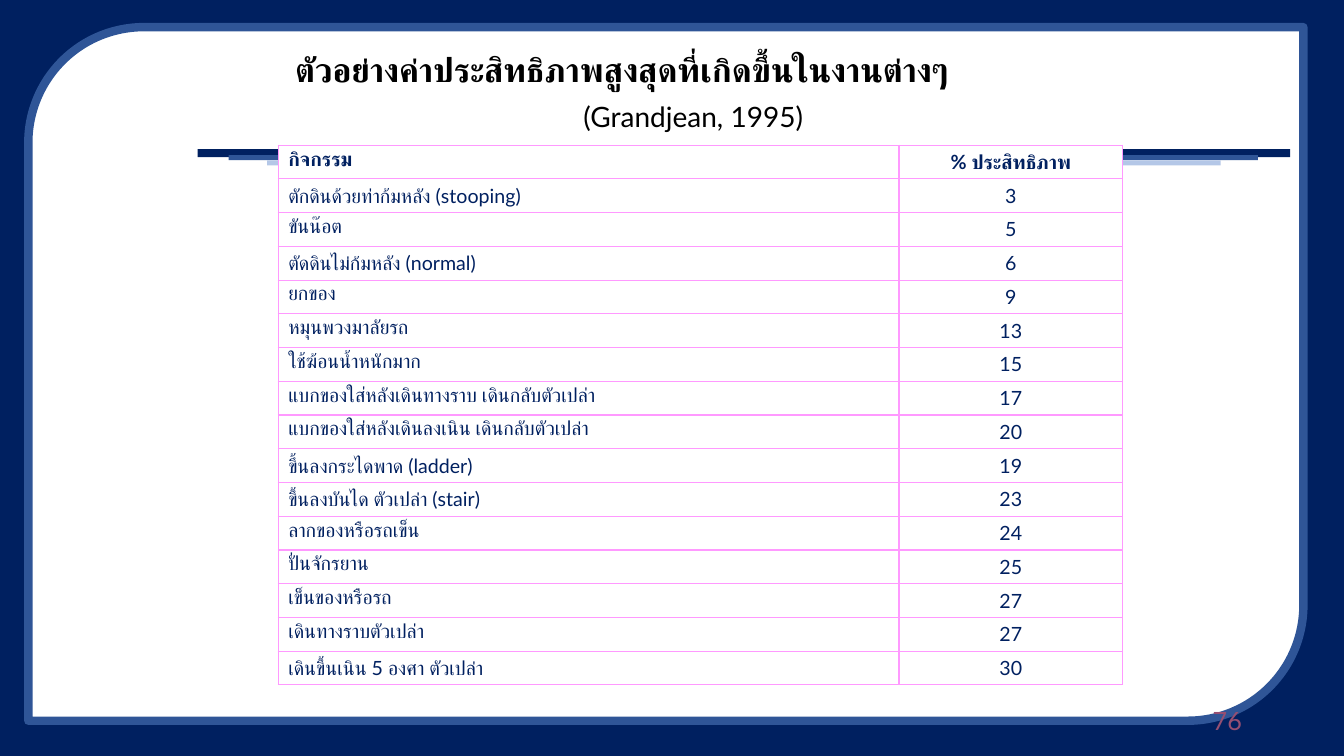
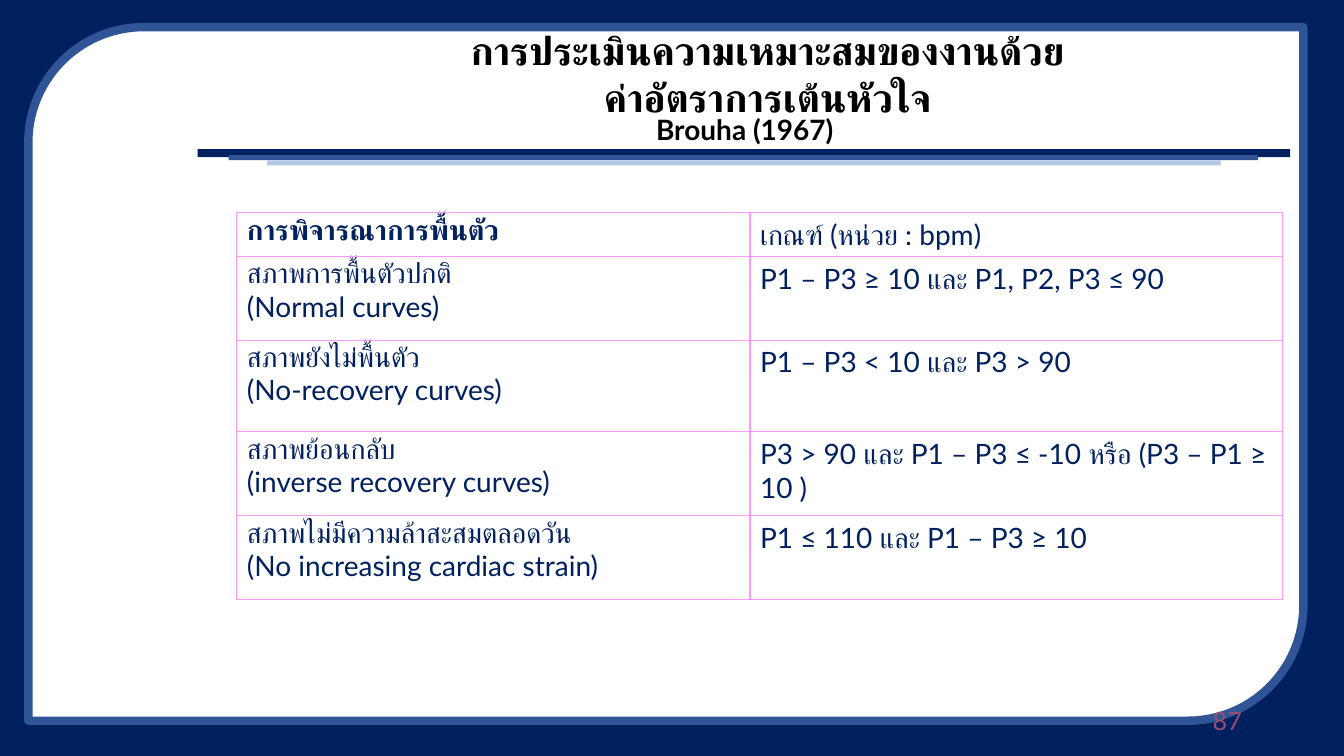
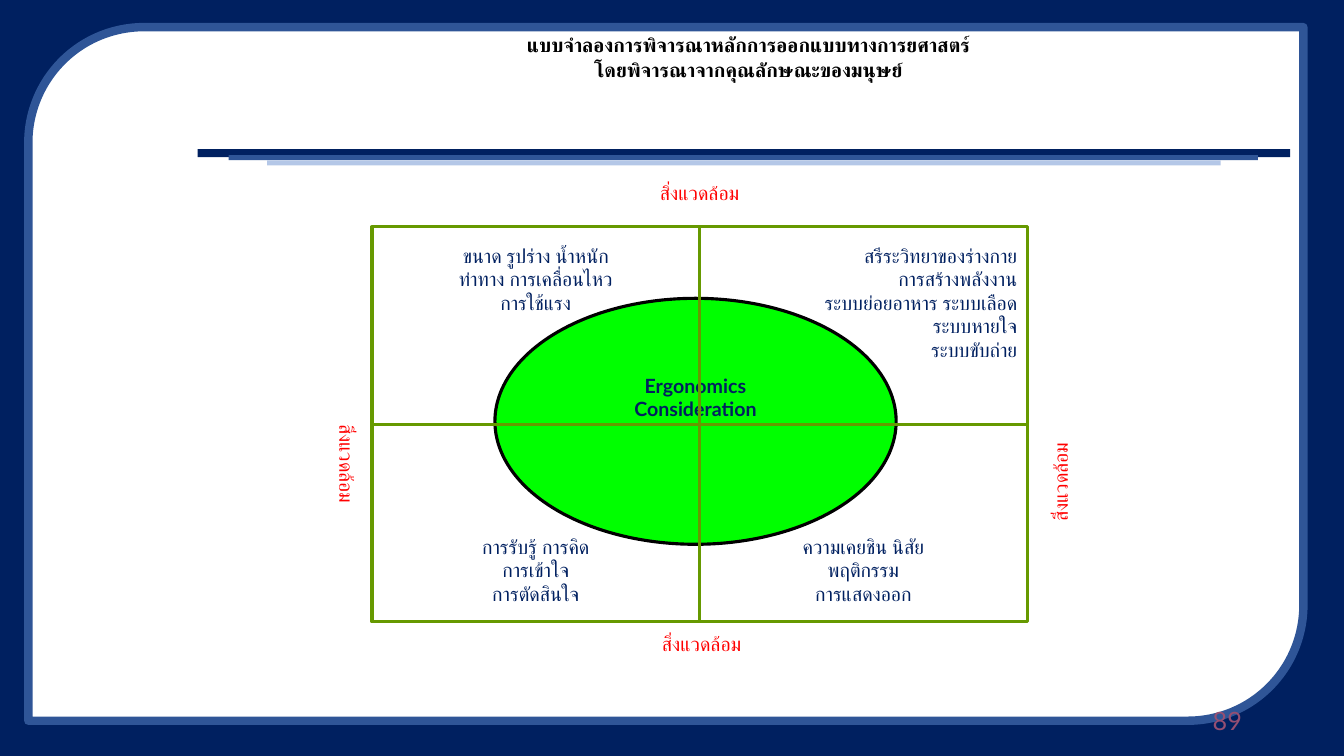
"""Build three ergonomics slides: work efficiency, heart-rate recovery, design model."""
from itertools import product
from lxml.etree import SubElement
from pptx import Presentation
from pptx.dml.color import RGBColor
from pptx.enum.shapes import MSO_SHAPE as SHAPE
from pptx.enum.text import MSO_ANCHOR as ANCHOR, PP_ALIGN as ALIGN
from pptx.oxml.ns import qn
from pptx.util import Pt

FONT = "Lato"
COLORS = {
    "navy": "002060", "blue": "2F5597", "pale": "B4C7E7", "white": "FFFFFF",
    "black": "000000", "number": "954F72", "pink": "FF99FF", "red": "FF0000",
    "lime": "00FF00", "olive": "669900",
}
FRAME = (20.2, 19.4, 910.8, 495.4)
BANDS = [
    ((141.1, 106.5, 780.5, 5.8), "navy"),
    ((163.4, 110.9, 735.1, 3.6), "blue"),
    ((190.8, 114.5, 681.1, 3.6), "pale"),
]
NUMBER_BOX = (678.2, 500.4, 216, 28.8)

EFFICIENCY = [
    ("กิจกรรม", "% ประสิทธิภาพ"),
    ("ตักดินด้วยท่าก้มหลัง (stooping)", "3"),
    ("ขันน๊อต", "5"),
    ("ตัดดินไม่ก้มหลัง (normal)", "6"),
    ("ยกของ", "9"),
    ("หมุนพวงมาลัยรถ", "13"),
    ("ใช้ฆ้อนน้ำหนักมาก", "15"),
    ("แบกของใส่หลังเดินทางราบ เดินกลับตัวเปล่า", "17"),
    ("แบกของใส่หลังเดินลงเนิน เดินกลับตัวเปล่า", "20"),
    ("ขึ้นลงกระไดพาด (ladder)", "19"),
    ("ขึ้นลงบันได ตัวเปล่า (stair)", "23"),
    ("ลากของหรือรถเข็น", "24"),
    ("ปั่นจักรยาน", "25"),
    ("เข็นของหรือรถ", "27"),
    ("เดินทางราบตัวเปล่า", "27"),
    ("เดินขึ้นเนิน 5 องศา ตัวเปล่า", "30"),
]
RECOVERY = [
    ("การพิจารณาการพื้นตัว", "เกณฑ์ (หน่วย : bpm)"),
    ("สภาพการพื้นตัวปกติ\n(Normal curves)", "P1 – P3 ≥ 10 และ P1, P2, P3 ≤ 90"),
    ("สภาพยังไม่พื้นตัว\n(No-recovery curves)", "P1 – P3 < 10 และ P3 > 90"),
    ("สภาพย้อนกลับ\n(inverse recovery curves)",
     "P3 > 90 และ P1 – P3 ≤ -10 หรือ (P3 – P1 ≥ 10 )"),
    ("สภาพไม่มีความล้าสะสมตลอดวัน\n(No increasing cardiac strain)",
     "P1 ≤ 110 และ P1 – P3 ≥ 10"),
]
ENVIRONMENT = "สิ่งแวดล้อม"
ENVIRONMENT_BOXES = [
    ((427, 447.8, 148.3, 23), 0),
    ((175.7, 317.5, 141.1, 27.4), 90),
    ((704.9, 327.6, 114.5, 33.8), 270),
    ((412.6, 126, 174.2, 24.5), 0),
]
QUADRANTS = [
    ("ขนาด รูปร่าง น้ำหนัก\nท่าทาง การเคลื่อนไหว\nการใช้แรง", ALIGN.CENTER),
    ("สรีระวิทยาของร่างกาย\nการสร้างพลังงาน\nระบบย่อยอาหาร ระบบเลือด\nระบบหายใจ\nระบบขับถ่าย",
     ALIGN.RIGHT),
    ("การรับรู้ การคิด\nการเข้าใจ\nการตัดสินใจ", ALIGN.CENTER),
    ("ความเคยชิน นิสัย\nพฤติกรรม\nการแสดงออก", ALIGN.CENTER),
]
GRID_LEFT, GRID_TOP, QUAD_W, QUAD_H = 265.7, 162, 234, 141.1


def rgb(name):
    return RGBColor.from_string(COLORS[name])


def put_text(tf, text, size=14, color="navy", bold=False, align=ALIGN.LEFT, spacing=None):
    for i, line in enumerate(text.split("\n")):
        p = tf.paragraphs[0] if i == 0 else tf.add_paragraph()
        p.alignment = align
        if spacing:
            p.line_spacing = spacing
        r = p.add_run()
        r.text = line
        f = r.font
        f.name, f.size, f.bold = FONT, Pt(size), bold
        f.color.rgb = rgb(color)


def add_text(s, box, text, anchor=ANCHOR.TOP, rotation=0, **style):
    sp = s.shapes.add_textbox(*map(Pt, box))
    sp.rotation = rotation
    tf = sp.text_frame
    tf.word_wrap, tf.vertical_anchor = True, anchor
    put_text(tf, text, **style)


def add_shape(s, kind, box, fill=None, line=None, width=2.25):
    sp = s.shapes.add_shape(kind, *map(Pt, box))
    sp.shadow.inherit = False
    if fill:
        sp.fill.solid()
        sp.fill.fore_color.rgb = rgb(fill)
    else:
        sp.fill.background()
    if line:
        sp.line.color.rgb = rgb(line)
        sp.line.width = Pt(width)
    else:
        sp.line.fill.background()
    return sp


def add_borders(cell, color):
    tc_pr = cell._tc.get_or_add_tcPr()
    for side in ("a:lnL", "a:lnR", "a:lnT", "a:lnB"):
        ln = SubElement(tc_pr, qn(side), w=str(Pt(1)))
        SubElement(SubElement(ln, qn("a:solidFill")), qn("a:srgbClr"), val=COLORS[color])


def add_table(s, left, top, widths, heights, rows, size, aligns, bold_heads):
    box = (left, top, sum(widths), sum(heights))
    table = s.shapes.add_table(len(rows), len(widths), *map(Pt, box)).table
    table.first_row = table.horz_banding = False
    for col, w in zip(table.columns, widths):
        col.width = Pt(w)
    for row, h in zip(table.rows, heights):
        row.height = Pt(h)
    for i, j in product(range(len(rows)), range(len(widths))):
        cell = table.cell(i, j)
        add_borders(cell, "pink")
        cell.fill.solid()
        cell.fill.fore_color.rgb = rgb("white")
        put_text(cell.text_frame, rows[i][j], size=size, align=aligns[j],
                 bold=i == 0 and bold_heads[j])


def new_slide(prs, number):
    s = prs.slides.add_slide(prs.slide_layouts[6])
    add_shape(s, SHAPE.ROUND_2_DIAG_RECTANGLE, FRAME, "white", "blue", 6)
    for box, color in BANDS:
        add_shape(s, SHAPE.RECTANGLE, box, color)
    add_text(s, NUMBER_BOX, number, anchor=ANCHOR.MIDDLE, size=18, color="number",
             align=ALIGN.RIGHT)
    return s


def efficiency_slide(prs):
    s = new_slide(prs, "76")
    add_text(s, (203.8, 31.7, 648, 36), "ตัวอย่างค่าประสิทธิภาพสูงสุดที่เกิดขึ้นในงานต่างๆ",
             size=24, color="black", bold=True)
    add_text(s, (409.7, 67.7, 220.3, 31), "(Grandjean, 1995)", size=20, color="black")
    add_table(s, 198.7, 103.7, (443.5, 159.8), [24.1] * len(EFFICIENCY), EFFICIENCY,
              14, (ALIGN.LEFT, ALIGN.CENTER), (True, True))


def recovery_slide(prs):
    s = new_slide(prs, "87")
    add_text(s, (226.1, 15.1, 644.4, 74.2), "การประเมินความเหมาะสมของงานด้วย\nค่าอัตราการเต้นหัวใจ",
             size=28, color="black", bold=True, align=ALIGN.CENTER)
    add_table(s, 169.2, 151.9, (366.5, 380.2), (31.2, 59.8, 65.5, 59.8, 59.8), RECOVERY,
              20, (ALIGN.LEFT, ALIGN.LEFT), (True, False))
    add_text(s, (461.5, 77, 162, 31), "Brouha (1967)", size=20, color="black", bold=True)


def model_slide(prs):
    s = new_slide(prs, "89")
    add_text(s, (145.4, 18, 778.3, 42.5),
             "แบบจำลองการพิจารณาหลักการออกแบบทางการยศาสตร์\nโดยพิจารณาจากคุณลักษณะของมนุษย์",
             color="black", bold=True, align=ALIGN.CENTER, spacing=1.1)
    for box, rotation in ENVIRONMENT_BOXES:
        add_text(s, box, ENVIRONMENT, rotation=rotation, color="red", align=ALIGN.CENTER)
    core = add_shape(s, SHAPE.OVAL, (353.5, 213.1, 286.6, 175.7), "lime", "black")
    core.text_frame.vertical_anchor = ANCHOR.TOP
    core.text_frame.margin_top = Pt(28)
    put_text(core.text_frame, "Ergonomics\nConsideration", bold=True, align=ALIGN.CENTER)
    for i, (text, align) in enumerate(QUADRANTS):
        row, col = divmod(i, 2)
        box = (GRID_LEFT + col * QUAD_W, GRID_TOP + row * QUAD_H, QUAD_W, QUAD_H)
        tf = add_shape(s, SHAPE.RECTANGLE, box, line="olive").text_frame
        tf.vertical_anchor = ANCHOR.BOTTOM if row else ANCHOR.TOP
        tf.margin_top = tf.margin_bottom = Pt(12)
        put_text(tf, text, align=align)


def main():
    prs = Presentation()
    prs.slide_width, prs.slide_height = Pt(960), Pt(540)
    fill = prs.slide_master.background.fill
    fill.solid()
    fill.fore_color.rgb = rgb("navy")
    for build in (efficiency_slide, recovery_slide, model_slide):
        build(prs)
    prs.save("out.pptx")


if __name__ == "__main__":
    main()
